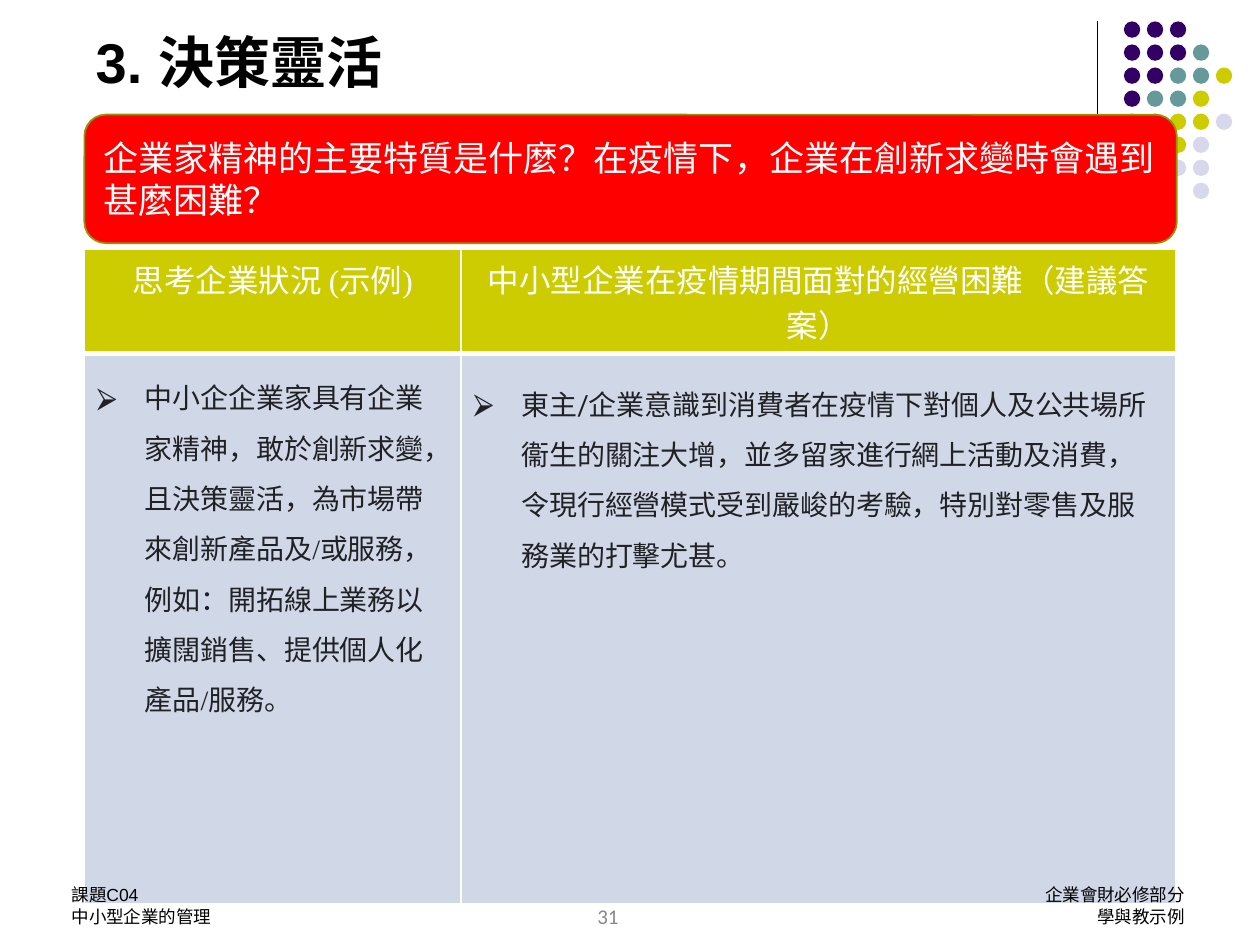
from dataclasses import dataclass

from lxml import etree
from pptx import Presentation
from pptx.dml.color import RGBColor
from pptx.enum.shapes import MSO_CONNECTOR, MSO_SHAPE
from pptx.enum.text import MSO_ANCHOR, PP_ALIGN
from pptx.oxml.ns import qn
from pptx.util import Inches, Pt

LEFT, CENTER, RIGHT = PP_ALIGN.LEFT, PP_ALIGN.CENTER, PP_ALIGN.RIGHT
TOP, MIDDLE, BOTTOM = MSO_ANCHOR.TOP, MSO_ANCHOR.MIDDLE, MSO_ANCHOR.BOTTOM
OVAL, ROUNDED = MSO_SHAPE.OVAL, MSO_SHAPE.ROUNDED_RECTANGLE
STRAIGHT = MSO_CONNECTOR.STRAIGHT

COLORS = {
    "black": "000000", "white": "FFFFFF", "red": "FF0000",
    "olive": "959500", "body": "202124", "page": "898989",
    "cell": "D0D8E8", "P": "330066", "T": "669999",
    "G": "CCCC00", "L": "D8D8EC",
}
# One letter per dot, naming its colour
DOT_ROWS = ["PPP", "PPPT", "PPTTG", "PTTG", "TTGGL", "  GL", "  LL", "   L"]
DOT_SIZE, DOT_LEFT, DOT_TOP = 0.13, 8.92, 0.17
DOT_STEP_X, DOT_STEP_Y = 0.73 / 4, 1.28 / 7


@dataclass
class Style:
    font: str
    size: float
    color: str
    bold: bool = False
    align: PP_ALIGN = LEFT


@dataclass
class TextBlock:
    box: tuple
    lines: list
    style: Style
    bulleted: bool = False
    top_inset: float = 0.05


HEADER = Style("Times New Roman", 18, "white", align=CENTER)
HEADERS = ["思考企業狀況 (示例)", "中小型企業在疫情期間面對的經營困難（建議答案）"]
QUESTION = "企業家精神的主要特質是什麼？在疫情下，企業在創新求變時會遇到甚麼困難？"

BLOCKS = [
    TextBlock((3.66, 7.12, 2.33, 0.5), ["31"],
              Style("Calibri", 12, "page", align=CENTER)),
    TextBlock((0.67, 2.84, 2.91, 2.93),
              ["中小企企業家具有企業家精神，敢於創新求變，且決策靈活，為市場帶來創新產品及/或服務，"
               "例如：開拓線上業務以擴闊銷售、提供個人化產品/服務。"],
              Style("Times New Roman", 16, "body"), bulleted=True),
    TextBlock((3.66, 2.89, 5.59, 1.72),
              ["東主/企業意識到消費者在疫情下對個人及公共場所衞生的關注大增，並多留家進行網上活動及消費，"
               "令現行經營模式受到嚴峻的考驗，特別對零售及服務業的打擊尤甚。"],
              Style("Roboto", 16, "body"), bulleted=True),
    TextBlock((5.79, 6.8, 3.71, 0.5), ["企業會財必修部分", "學與教示例"],
              Style("Arial", 10, "black", align=RIGHT), top_inset=0.22),
    TextBlock((0.47, 6.8, 2.33, 0.5), ["課題C04", "中小型企業的管理"],
              Style("Arial", 10, "black"), top_inset=0.22),
]


def rgb(name: str) -> RGBColor:
    return RGBColor.from_string(COLORS[name])


def inches(box: tuple) -> list:
    return [Inches(length) for length in box]


def write_lines(frame, lines: list, style: Style) -> None:
    for index, line in enumerate(lines):
        paragraph = frame.add_paragraph() if index else frame.paragraphs[0]
        paragraph.alignment = style.align
        run = paragraph.add_run()
        run.text = line
        run.font.name = style.font
        run.font.size = Pt(style.size)
        run.font.bold = style.bold
        run.font.color.rgb = rgb(style.color)


def add_bullet(paragraph, color: str) -> None:
    paragraph.line_spacing = 1.5
    props = paragraph._p.get_or_add_pPr()
    props.set("marL", str(Inches(0.38)))
    props.set("indent", str(-Inches(0.38)))
    tint = etree.SubElement(props, qn("a:buClr"))
    etree.SubElement(tint, qn("a:srgbClr"), val=COLORS[color])
    etree.SubElement(props, qn("a:buFont"), typeface="Arial")
    etree.SubElement(props, qn("a:buChar"), char="⮚")


def add_block(slide, block: TextBlock) -> None:
    frame = slide.shapes.add_textbox(*inches(block.box)).text_frame
    frame.word_wrap = True
    frame.margin_top = Inches(block.top_inset)
    write_lines(frame, block.lines, block.style)
    if block.bulleted:
        for paragraph in frame.paragraphs:
            add_bullet(paragraph, block.style.color)


def add_filled(slide, kind, box: tuple, color: str):
    shape = slide.shapes.add_shape(kind, *inches(box))
    shape.shadow.inherit = False
    shape.fill.solid()
    shape.fill.fore_color.rgb = rgb(color)
    shape.line.fill.background()
    return shape


def add_decoration(slide) -> None:
    rule = slide.shapes.add_connector(STRAIGHT, *inches((8.71, 0.17, 8.71, 1.83)))
    rule.line.color.rgb = rgb("black")
    rule.line.width = Pt(0.75)
    etree.SubElement(rule._element.spPr, qn("a:effectLst"))
    for row, letters in enumerate(DOT_ROWS):
        for column, letter in enumerate(letters):
            if letter != " ":
                left = DOT_LEFT + column * DOT_STEP_X
                top = DOT_TOP + row * DOT_STEP_Y
                add_filled(slide, OVAL, (left, top, DOT_SIZE, DOT_SIZE), letter)


def format_cell(cell, fill: str, top_width: float, bottom_width: float) -> None:
    props = cell._tc.get_or_add_tcPr()
    widths = {"a:lnL": 1, "a:lnR": 1, "a:lnT": top_width, "a:lnB": bottom_width}
    for edge, width in widths.items():
        line = etree.SubElement(props, qn(edge), w=str(Pt(width)))
        paint = etree.SubElement(line, qn("a:solidFill"))
        etree.SubElement(paint, qn("a:srgbClr"), val=COLORS["white"])
    cell.fill.solid()
    cell.fill.fore_color.rgb = rgb(fill)


def add_case_table(slide) -> None:
    table = slide.shapes.add_table(2, 2, *inches((0.67, 1.98, 8.67, 5.07))).table
    for column, width in zip(table.columns, (2.99, 5.67)):
        column.width = Inches(width)
    for row, height in zip(table.rows, (0.7, 4.37)):
        row.height = Inches(height)
    for index, header in enumerate(HEADERS):
        heading = table.cell(0, index)
        write_lines(heading.text_frame, [header], HEADER)
        format_cell(heading, "G", 1, 3)
        format_cell(table.cell(1, index), "cell", 3, 1)


def add_title(slide) -> None:
    title = slide.shapes.title
    title.left, title.top, title.width, title.height = inches((0.5, -0.03, 9, 0.83))
    frame = title.text_frame
    frame.vertical_anchor = BOTTOM
    write_lines(frame, ["3. 決策靈活"], Style("Arial", 32, "black", bold=True))
    frame.paragraphs[0]._p.get_or_add_pPr().set("marL", str(Inches(0.16)))


def add_question(slide) -> None:
    banner = add_filled(slide, ROUNDED, (0.67, 0.91, 8.67, 1.02), "red")
    banner.adjustments[0] = 0.167
    banner.line.color.rgb = rgb("olive")
    banner.line.width = Pt(1)
    banner.text_frame.word_wrap = True
    banner.text_frame.vertical_anchor = MIDDLE
    write_lines(banner.text_frame, [QUESTION], Style("Calibri", 20, "white"))


def main() -> None:
    deck = Presentation()
    deck.slide_width, deck.slide_height = Inches(10), Inches(7.5)
    slide = deck.slides.add_slide(deck.slide_layouts[5])
    add_decoration(slide)
    add_title(slide)
    add_case_table(slide)
    add_question(slide)
    # Page number, table body texts and footers
    for block in BLOCKS:
        add_block(slide, block)
    deck.save("out.pptx")


if __name__ == "__main__":
    main()
